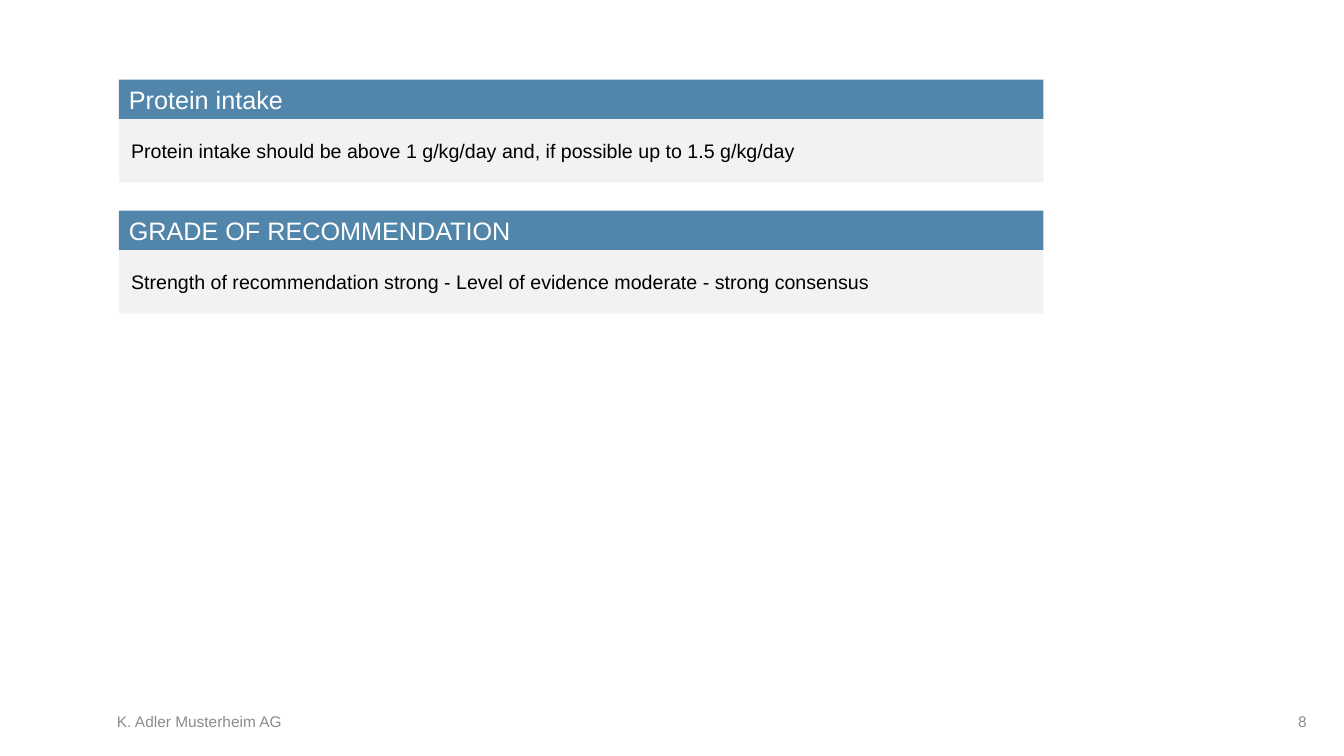
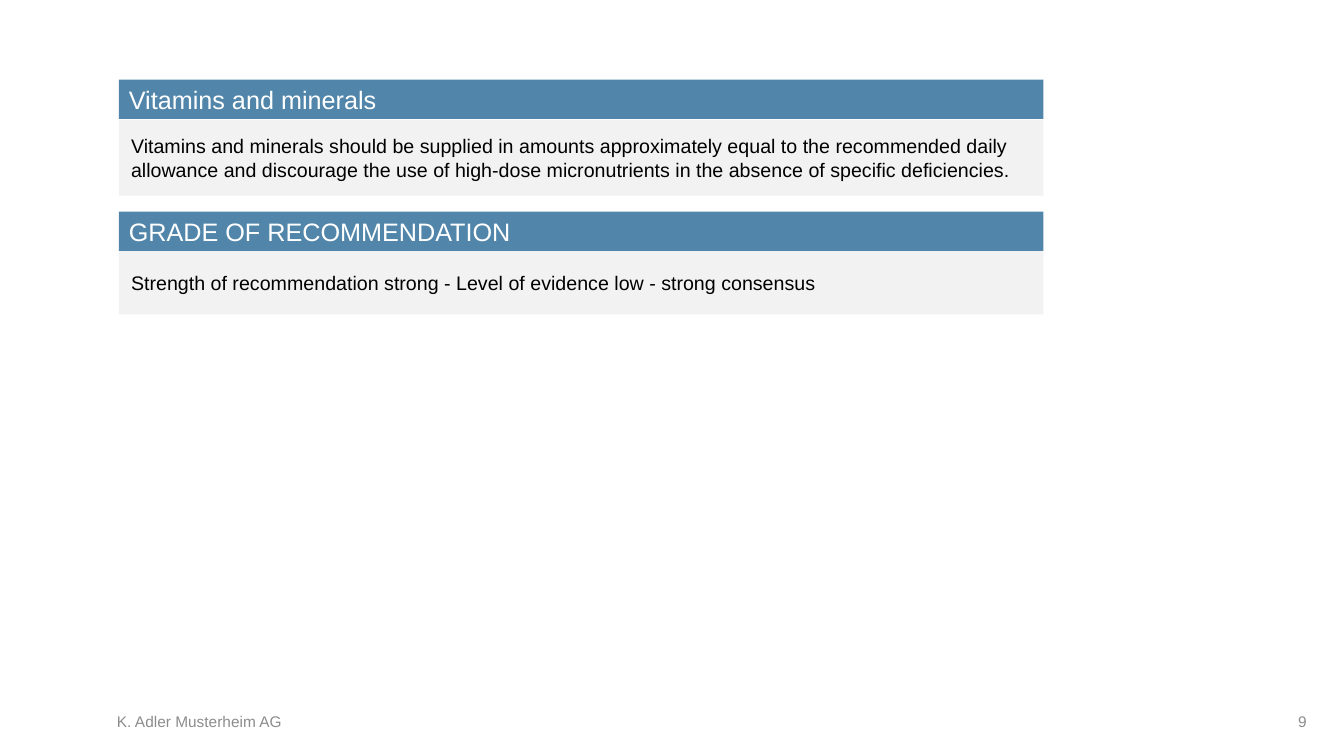
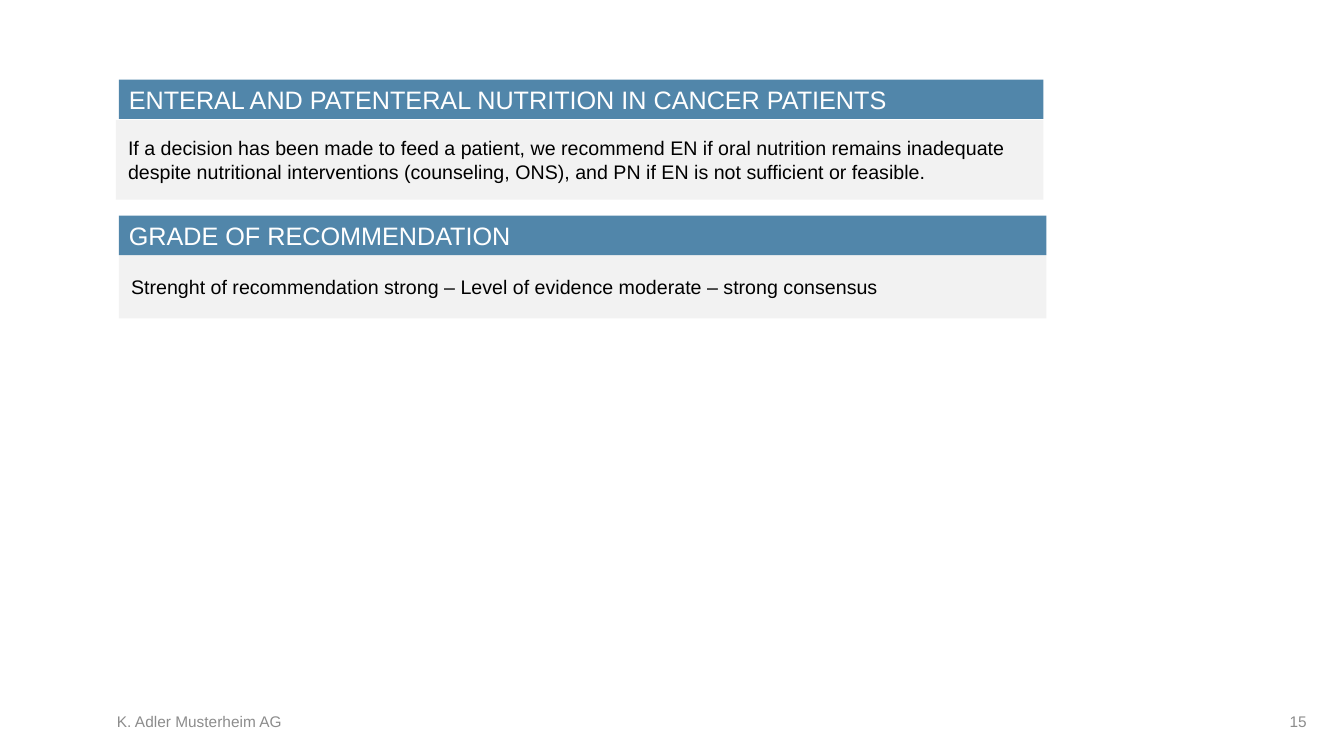
from dataclasses import dataclass

from pptx import Presentation, util as u
from pptx.dml.color import RGBColor
from pptx.enum import shapes, text


@dataclass(frozen=True)
class Theme:
    font: str = "Arial"
    heading_fill: str = "5186AA"
    body_fill: str = "F2F2F2"
    heading_text: str = "FFFFFF"
    body_text: str = "000000"
    footer_text: str = "8C8C8C"
    heading_size: int = 18
    body_size: int = 14
    footer_size: int = 11


@dataclass(frozen=True)
class Box:
    left: float
    top: float
    width: float
    height: float

    def inches(self):
        return [u.Inches(n) for n in (self.left, self.top, self.width, self.height)]


@dataclass(frozen=True)
class Panel:
    """A heading bar with a body below; outdent moves the body's left edge out."""
    box: Box
    heading: str
    body: str
    gap: float = 0
    outdent: float = 0


THEME = Theme()
SLIDE_WIDTH, SLIDE_HEIGHT = 13.33, 7.5
LEFT, FIRST_TOP, WIDTH = 1.18, 0.79, 9.17
HEADING_HEIGHT = 0.39
PANEL_HEIGHT = 1.02
GRADE = "GRADE OF RECOMMENDATION"
COMPANY = "K. Adler Musterheim AG"
FOOTER = Box(1.04, 6.98, 12.04, 0.35)
FOOTER_NAME_WIDTH, FOOTER_NUMBER_WIDTH = 4.09, 3.11


def write(shape, content, size, color, insets, alignment=text.PP_ALIGN.LEFT):
    """Fill a shape with one paragraph; insets are left, top, right and bottom."""
    frame = shape.text_frame
    left, top, right, bottom = (u.Inches(n) for n in insets)
    frame_format = {
        "word_wrap": True, "vertical_anchor": text.MSO_ANCHOR.MIDDLE,
        "margin_left": left, "margin_top": top,
        "margin_right": right, "margin_bottom": bottom,
    }
    for name, value in frame_format.items():
        setattr(frame, name, value)
    paragraph = frame.paragraphs[0]
    paragraph.alignment = alignment
    run = paragraph.add_run()
    run.text = content
    for name, value in {"name": THEME.font, "size": u.Pt(size)}.items():
        setattr(run.font, name, value)
    run.font.color.rgb = RGBColor.from_string(color)


def add_bar(slide, box, fill):
    shape = slide.shapes.add_shape(shapes.MSO_SHAPE.RECTANGLE, *box.inches())
    shape.shadow.inherit = False
    shape.fill.solid()
    shape.fill.fore_color.rgb = RGBColor.from_string(fill)
    shape.line.fill.background()
    return shape


def add_panel(slide, panel):
    box = panel.box
    offset = HEADING_HEIGHT + panel.gap
    body_box = Box(box.left - panel.outdent, box.top + offset,
                   box.width + panel.outdent, box.height - offset)
    body = add_bar(slide, body_box, THEME.body_fill)
    write(body, panel.body, THEME.body_size, THEME.body_text, (0.12, 0, 0, 0))
    heading_box = Box(box.left, box.top, box.width, HEADING_HEIGHT)
    heading = add_bar(slide, heading_box, THEME.heading_fill)
    write(heading, panel.heading, THEME.heading_size, THEME.heading_text,
          (0.1, 0.05, 0.1, 0.05))


def add_footer(slide, box, number):
    right_left = box.left + box.width - FOOTER_NUMBER_WIDTH
    parts = [
        (box.left, FOOTER_NAME_WIDTH, COMPANY, text.PP_ALIGN.LEFT),
        (right_left, FOOTER_NUMBER_WIDTH, str(number), text.PP_ALIGN.RIGHT),
    ]
    for left, width, content, alignment in parts:
        part_box = Box(left, box.top, width, box.height)
        shape = slide.shapes.add_textbox(*part_box.inches())
        write(shape, content, THEME.footer_size, THEME.footer_text,
              (0.12, 0, 0.12, 0), alignment)


def add_recommendation_slide(presentation, number, panels):
    slide = presentation.slides.add_slide(presentation.slide_layouts[6])
    add_footer(slide, FOOTER, number)
    for panel in panels:
        add_panel(slide, panel)


RECOMMENDATIONS = {
    8: [
        Panel(Box(LEFT, FIRST_TOP, WIDTH, PANEL_HEIGHT), "Protein intake",
              "Protein intake should be above 1 g/kg/day and, if possible "
              "up to 1.5 g/kg/day"),
        Panel(Box(LEFT, 2.09, WIDTH, PANEL_HEIGHT), GRADE,
              "Strength of recommendation strong - Level of evidence moderate "
              "- strong consensus"),
    ],
    9: [
        Panel(Box(LEFT, FIRST_TOP, WIDTH, 1.15), "Vitamins and minerals",
              "Vitamins and minerals should be supplied in amounts approximately "
              "equal to the recommended daily allowance and discourage the use of "
              "high-dose micronutrients in the absence of specific deficiencies.",
              gap=0.01),
        Panel(Box(LEFT, 2.1, WIDTH, PANEL_HEIGHT), GRADE,
              "Strength of recommendation strong - Level of evidence low "
              "- strong consensus"),
    ],
    15: [
        Panel(Box(LEFT, FIRST_TOP, WIDTH, 1.19),
              "ENTERAL AND PATENTERAL NUTRITION IN CANCER PATIENTS",
              "If a decision has been made to feed a patient, we recommend EN if "
              "oral nutrition remains inadequate despite nutritional interventions "
              "(counseling, ONS), and PN if EN is not sufficient or feasible.",
              gap=0.01, outdent=0.03),
        Panel(Box(LEFT, 2.14, 9.2, PANEL_HEIGHT), GRADE,
              "Strenght of recommendation strong – Level of evidence moderate "
              "– strong consensus"),
    ],
}


def main():
    presentation = Presentation()
    presentation.slide_width = u.Inches(SLIDE_WIDTH)
    presentation.slide_height = u.Inches(SLIDE_HEIGHT)
    for number, panels in RECOMMENDATIONS.items():
        add_recommendation_slide(presentation, number, panels)
    presentation.save("out.pptx")


if __name__ == "__main__":
    main()
